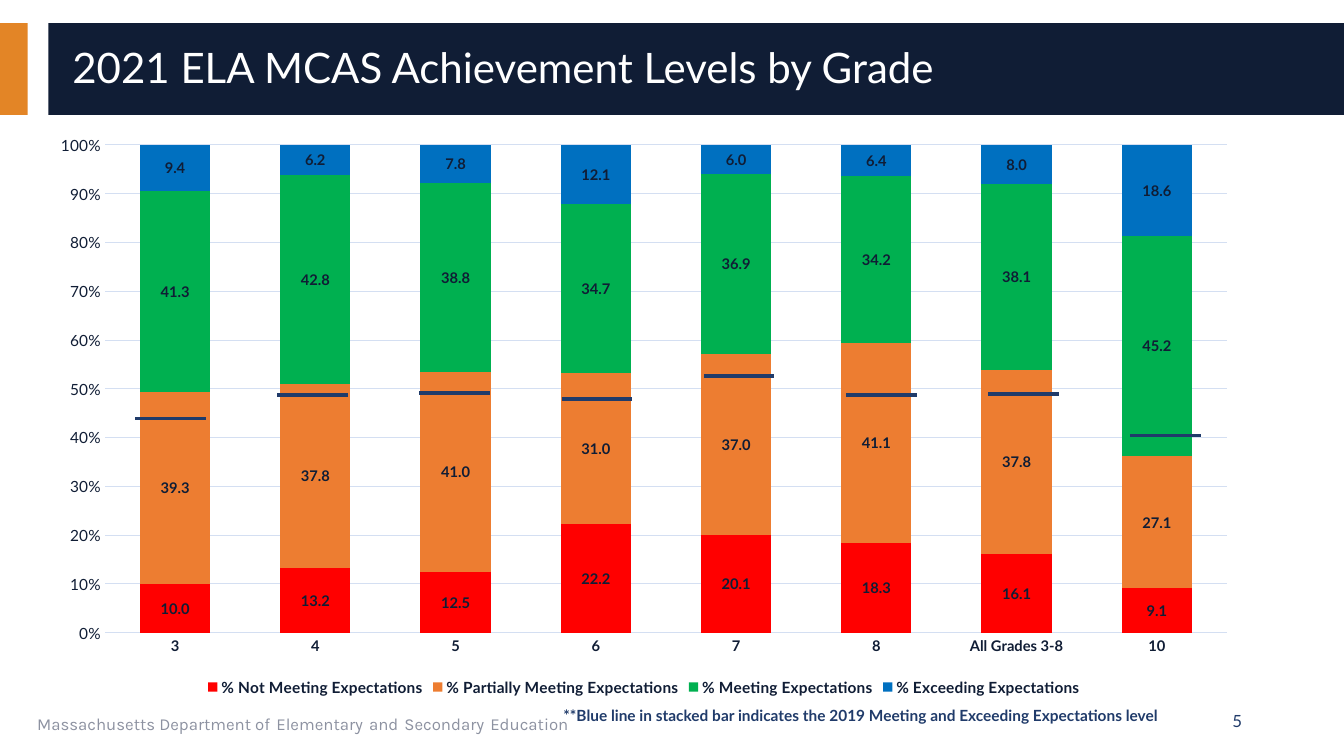
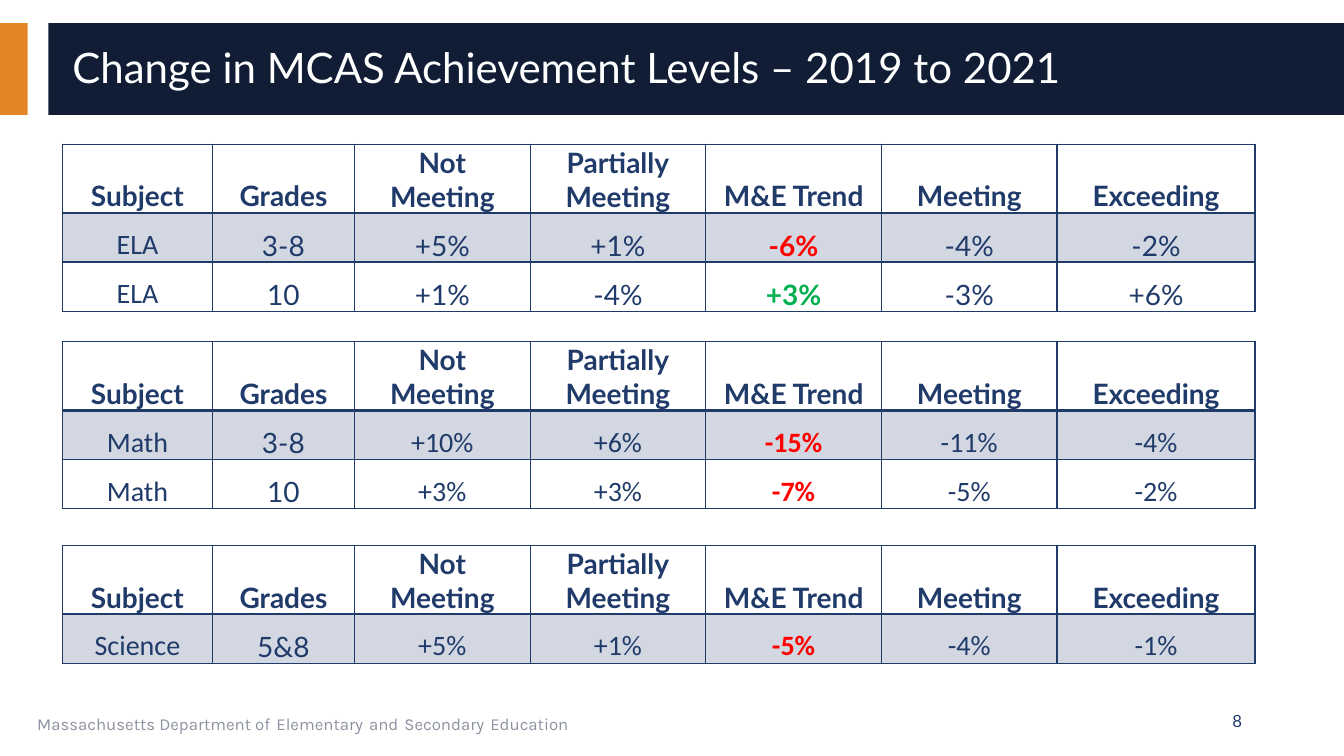
import dataclasses

import lxml.etree
import pptx
import pptx.chart.data
import pptx.dml.color
import pptx.enum.chart
import pptx.enum.shapes
import pptx.enum.text
import pptx.oxml
import pptx.oxml.ns
import pptx.util


@dataclasses.dataclass(frozen=True)
class Theme:
    navy: str = "101D35"
    blue: str = "203B6A"
    orange: str = "E38526"
    gray: str = "8D92A1"
    grid: str = "D4DFF2"
    white: str = "FFFFFF"
    fall: str = "FF0000"
    rise: str = "00B050"
    levels: tuple = ("FF0000", "ED7D31", "00B050", "0070C0")
    main_font: str = "Lato"
    cell_font: str = "Calibri"
    footer_font: str = "Karla"
    title_size: float = 30
    table_size: float = 20
    gap_size: float = 18
    small_size: float = 12
    note_size: float = 11
    label_size: float = 10.5


theme = Theme()
rgb = pptx.dml.color.RGBColor.from_string
align = pptx.enum.text.PP_ALIGN
anchor = pptx.enum.text.MSO_ANCHOR

presentation = pptx.Presentation()
presentation.slide_width = pptx.util.Inches(13.33)
presentation.slide_height = pptx.util.Inches(7.5)


def area(left, top, width, height):
    """Turn percentages of the slide into left, top, width and height."""
    across, down = presentation.slide_width, presentation.slide_height
    return [pptx.util.Emu(round(share * side / 100)) for share, side
            in ((left, across), (top, down), (width, across), (height, down))]


def style(font, size, color, name=theme.main_font, bold=False):
    values = {"size": pptx.util.Pt(size), "name": name, "bold": bold}
    for attribute, value in values.items():
        setattr(font, attribute, value)
    font.color.rgb = rgb(color)


# Shared parts: bands, footer, title and slide number
bands = [
    (area(0, 3.07, 2.06, 12.13), theme.orange),
    (area(3.6, 3.07, 96.4, 12.13), theme.navy),
]
footer_runs = [("Massachusetts Department of", theme.small_size, theme.gray)]
for word in ("Elementary", "and", "Secondary", "Education"):
    footer_runs += [(" ", theme.gap_size, theme.blue),
                    (word, theme.small_size, theme.gray)]
note = "**Blue line in stacked bar indicates the 2019 Meeting and Exceeding Expectations level"
pages = [
    ("2021 ELA MCAS Achievement Levels by Grade", "5", note),
    ("Change in MCAS Achievement Levels – 2019 to 2021", "8", None),
]
slides = []
for title, number, caption in pages:
    slide = presentation.slides.add_slide(presentation.slide_layouts[6])
    slides.append(slide)
    for place, color in bands:
        shape = slide.shapes.add_shape(pptx.enum.shapes.MSO_SHAPE.RECTANGLE, *place)
        shape.shadow.inherit = False
        shape.fill.solid()
        shape.fill.fore_color.rgb = rgb(color)
        shape.line.fill.background()

    # Place, runs, font, bold, anchor, paragraph format
    boxes = [
        (area(4.65, 4.27, 93.3, 9.87), [(title, theme.title_size, theme.white)],
         theme.main_font, False, anchor.MIDDLE, {"line_spacing": 0.9}),
        (area(2.03, 92.67, 63.3, 5.33), footer_runs,
         theme.footer_font, False, anchor.TOP, {}),
        (area(70.65, 92.67, 22.5, 5.33), [(number, theme.small_size, theme.blue)],
         theme.main_font, False, anchor.MIDDLE, {"alignment": align.RIGHT}),
    ]
    if caption:
        boxes.append((area(41.18, 92.8, 48.75, 3.87),
                      [(caption, theme.note_size, theme.blue)],
                      theme.main_font, True, anchor.TOP, {}))
    for place, runs, font_name, bold, vertical_anchor, paragraph_format in boxes:
        frame = slide.shapes.add_textbox(*place).text_frame
        frame.word_wrap = True
        frame.vertical_anchor = vertical_anchor
        paragraph = frame.paragraphs[0]
        for attribute, value in paragraph_format.items():
            setattr(paragraph, attribute, value)
        for text, size, color in runs:
            run = paragraph.add_run()
            run.text = text
            style(run.font, size, color, font_name, bold)

chart_slide, table_slide = slides

# Stacked chart of achievement levels
chart_data = pptx.chart.data.CategoryChartData(number_format="0.0")
chart_data.categories = ["3", "4", "5", "6", "7", "8", "All Grades 3-8", "10"]
levels = {
    "% Not Meeting Expectations": (10, 13.2, 12.5, 22.2, 20.1, 18.3, 16.1, 9.1),
    "% Partially Meeting Expectations": (39.3, 37.8, 41, 31, 37, 41.1, 37.8, 27.1),
    "% Meeting Expectations": (41.3, 42.8, 38.8, 34.7, 36.9, 34.2, 38.1, 45.2),
    "% Exceeding Expectations": (9.4, 6.2, 7.8, 12.1, 6, 6.4, 8, 18.6),
}
for name, values in levels.items():
    chart_data.add_series(name, values)
chart = chart_slide.shapes.add_chart(
    pptx.enum.chart.XL_CHART_TYPE.COLUMN_STACKED_100,
    *area(2.7, 16.4, 90.45, 76.27), chart_data).chart
style(chart.font, theme.label_size, theme.navy)
chart.has_title = False
chart.has_legend = True
chart.legend.position = pptx.enum.chart.XL_LEGEND_POSITION.BOTTOM
chart.legend.include_in_layout = False
style(chart.legend.font, theme.note_size, theme.navy, bold=True)

plot = chart.plots[0]
for attribute, value in {"gap_width": 100, "overlap": 100,
                         "vary_by_categories": False}.items():
    setattr(plot, attribute, value)
for series, color in zip(plot.series, theme.levels):
    series.format.fill.solid()
    series.format.fill.fore_color.rgb = rgb(color)
    labels = series.data_labels
    for attribute, value in {"show_value": True, "number_format": "0.0",
                             "number_format_is_linked": False}.items():
        setattr(labels, attribute, value)
    style(labels.font, theme.label_size, theme.navy, bold=True)

# Axes
category_axis, value_axis = chart.category_axis, chart.value_axis
for axis in (category_axis, value_axis):
    axis.major_tick_mark = axis.minor_tick_mark = pptx.enum.chart.XL_TICK_MARK.NONE
style(category_axis.tick_labels.font, theme.label_size, theme.navy, bold=True)
style(value_axis.tick_labels.font, theme.note_size, theme.navy)
for attribute, value in {"minimum_scale": 0, "maximum_scale": 1, "major_unit": 0.1,
                         "has_major_gridlines": True}.items():
    setattr(value_axis, attribute, value)
value_axis.tick_labels.number_format = "0%"
value_axis.tick_labels.number_format_is_linked = False
value_axis.format.line.fill.background()
for line in (category_axis.format.line, value_axis.major_gridlines.format.line):
    line.color.rgb = rgb(theme.grid)
    line.width = pptx.util.Pt(0.75)

# Fixed plot area, in percent of the chart, so the markers meet the bars
plot_area = chart.element.xpath(".//c:plotArea")[0]
for old_layout in plot_area.findall(pptx.oxml.ns.qn("c:layout")):
    plot_area.remove(old_layout)
layout = lxml.etree.Element(pptx.oxml.ns.qn("c:layout"))
manual = lxml.etree.SubElement(layout, pptx.oxml.ns.qn("c:manualLayout"))
settings = {"layoutTarget": "inner", "xMode": "edge", "yMode": "edge"}
for tag, percent in {"x": 5.65, "y": 3.65, "w": 92.3, "h": 84.6}.items():
    settings[tag] = str(percent / 100)
for tag, value in settings.items():
    lxml.etree.SubElement(manual, pptx.oxml.ns.qn("c:" + tag)).set("val", value)
plot_area.insert(0, layout)

# Markers of the 2019 level, one per bar
marker_tops = (55.33, 52.27, 52, 52.8, 49.73, 52.27, 52.13, 57.6)
for index, marker_top in enumerate(marker_tops):
    left, top, width, height = area(10.05 + 10.58 * index, marker_top, 5.25, 0)
    connector = chart_slide.shapes.add_connector(
        pptx.enum.shapes.MSO_CONNECTOR.STRAIGHT, left, top, left + width, top)
    connector.line.color.rgb = rgb(theme.blue)
    connector.line.width = pptx.util.Pt(2.5)
    lxml.etree.SubElement(connector.element.spPr, pptx.oxml.ns.qn("a:effectLst"))

# Tables of change by subject
header = ("Subject", "Grades", "Not\nMeeting", "Partially\nMeeting",
          "M&E Trend", "Meeting", "Exceeding")
trend_column = header.index("M&E Trend")
column_shares = (11.16, 10.57, 13.07, 13.07, 13.07, 13.07, 14.73)
header_share, row_share = 9.1, 6.5
# Top, font of the figures, rows
subject_tables = [
    (19.07, theme.main_font, [
        ("ELA", "3-8", "+5%", "+1%", "-6%", "-4%", "-2%"),
        ("ELA", "10", "+1%", "-4%", "+3%", "-3%", "+6%")]),
    (45.2, theme.cell_font, [
        ("Math", "3-8", "+10%", "+6%", "-15%", "-11%", "-4%"),
        ("Math", "10", "+3%", "+3%", "-7%", "-5%", "-2%")]),
    (72.13, theme.cell_font, [
        ("Science", "5&8", "+5%", "+1%", "-5%", "-4%", "-1%")]),
]
cell_format = {
    "margin_left": pptx.util.Pt(1), "margin_right": pptx.util.Pt(1),
    "margin_top": pptx.util.Pt(1), "margin_bottom": 0,
    "vertical_anchor": anchor.BOTTOM,
}
for table_top, figure_font, body in subject_tables:
    rows = [header, *body]
    row_shares = [header_share] + [row_share] * len(body)
    table = table_slide.shapes.add_table(
        len(rows), len(header),
        *area(4.65, table_top, sum(column_shares), sum(row_shares))).table
    table.first_row = table.horz_banding = False
    for column, share in zip(table.columns, column_shares):
        column.width = area(0, 0, share, 0)[2]
    for row, share in zip(table.rows, row_shares):
        row.height = area(0, 0, 0, share)[3]

    column_fonts = [theme.cell_font, theme.main_font] + [figure_font] * 5
    for row_index, texts in enumerate(rows):
        is_header = row_index == 0
        for column_index, text in enumerate(texts):
            cell = table.cell(row_index, column_index)
            for attribute, value in cell_format.items():
                setattr(cell, attribute, value)

            # Borders come before the fill
            properties = cell._tc.get_or_add_tcPr()
            for side in "LRTB":
                points = 2 if is_header and side == "B" else 1
                border = lxml.etree.SubElement(properties, pptx.oxml.ns.qn("a:ln" + side))
                border.set("w", str(pptx.util.Pt(points)))
                solid = lxml.etree.SubElement(border, pptx.oxml.ns.qn("a:solidFill"))
                lxml.etree.SubElement(
                    solid, pptx.oxml.ns.qn("a:srgbClr")).set("val", theme.blue)
            if row_index == 1:
                cell.fill.solid()
                cell.fill.fore_color.rgb = rgb(theme.blue)
                tint = properties.xpath("./a:solidFill/a:srgbClr")[0]
                lxml.etree.SubElement(tint, pptx.oxml.ns.qn("a:alpha")).set("val", "20000")
            else:
                cell.fill.background()

            # Text, with the trend in red or green
            is_trend = column_index == trend_column and not is_header
            color = theme.blue
            if is_trend:
                color = theme.fall if text.startswith("-") else theme.rise
            font_name = theme.main_font if is_header else column_fonts[column_index]
            cell.text_frame.text = text
            for paragraph in cell.text_frame.paragraphs:
                paragraph.alignment = align.CENTER
                style(paragraph.runs[0].font, theme.table_size, color,
                      font_name, is_header or is_trend)

presentation.save("out.pptx")
